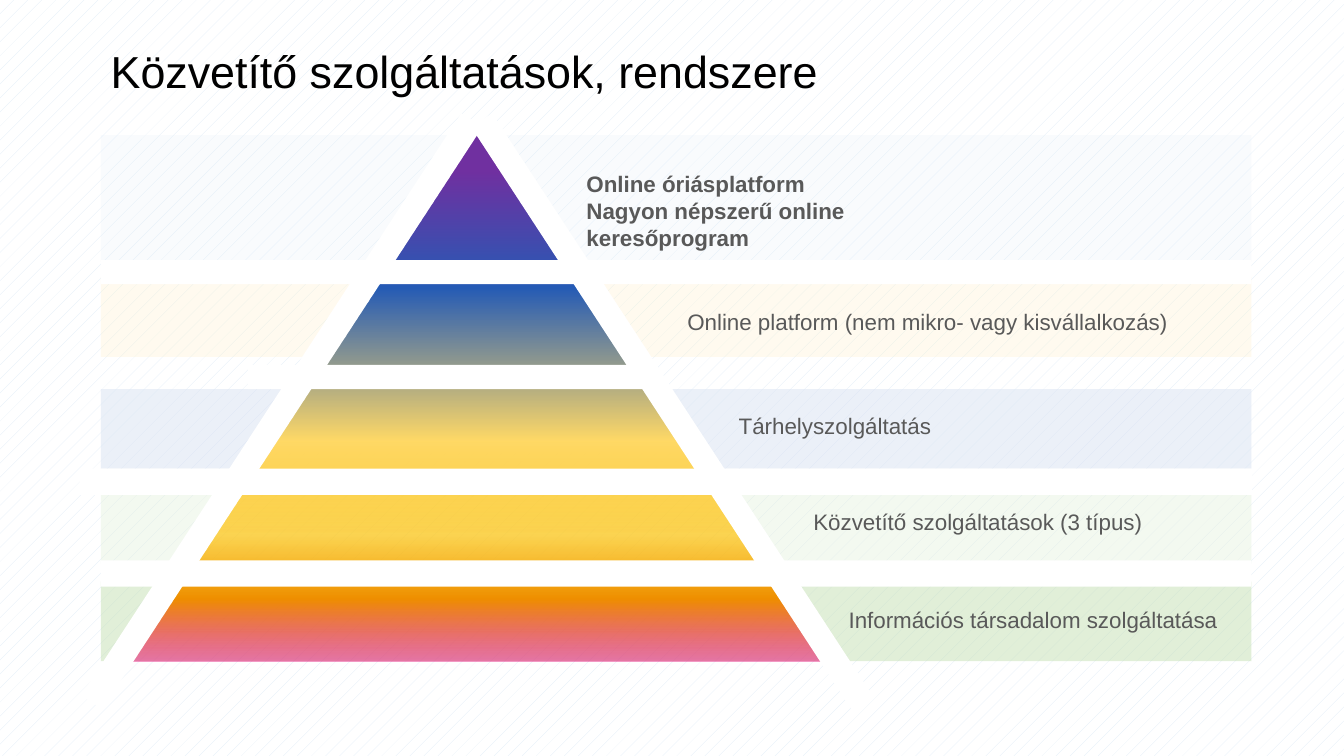
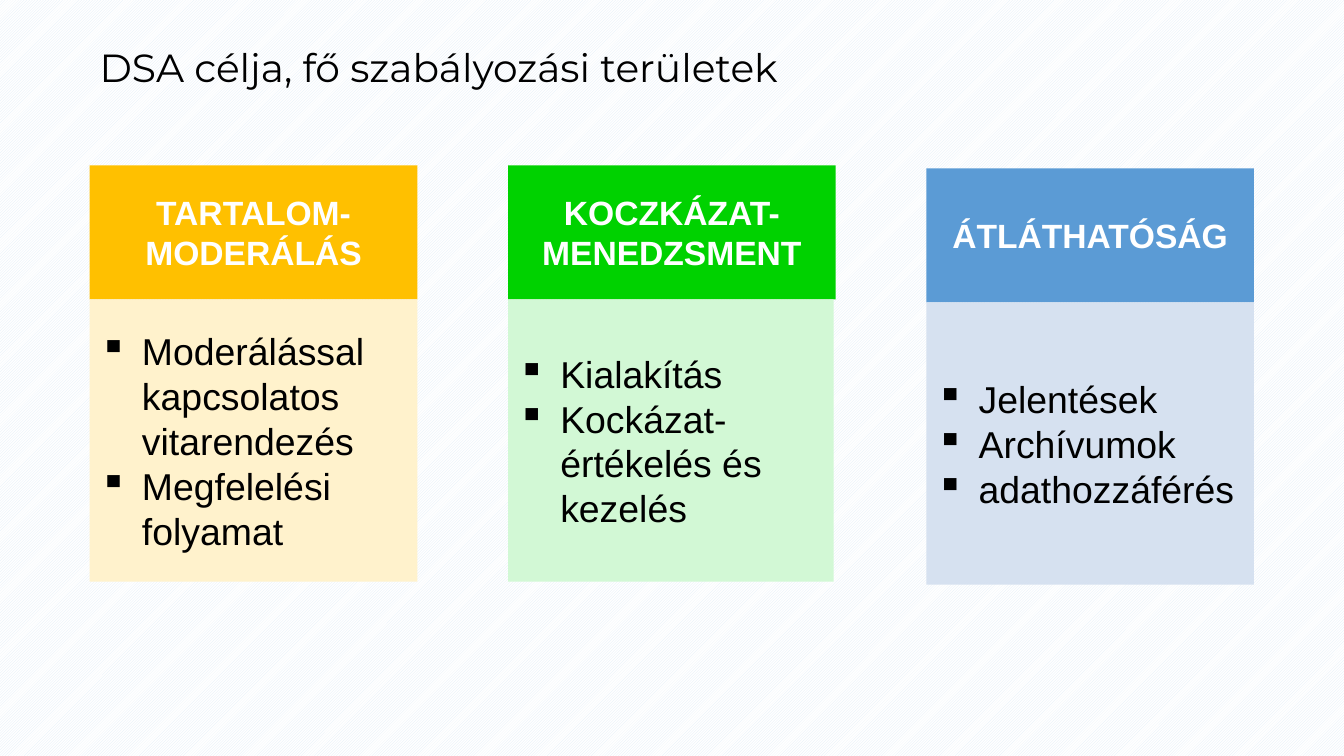
from dataclasses import dataclass
from math import atan2, degrees

from lxml.etree import SubElement
from pptx import Presentation
from pptx.dml.color import RGBColor
from pptx.enum.dml import MSO_PATTERN
from pptx.enum.shapes import MSO_SHAPE
from pptx.enum.text import MSO_ANCHOR, PP_ALIGN
from pptx.oxml.ns import qn
from pptx.shapes.autoshape import Shape
from pptx.slide import Slide
from pptx.util import Emu, Inches, Pt

# Grid: 160 columns by 90 rows of square cells
COLS, ROWS = 160, 90
CELL = Inches(7.5) / ROWS

BLACK = RGBColor(0x00, 0x00, 0x00)
WHITE = RGBColor(0xFF, 0xFF, 0xFF)
GREY = RGBColor(0x59, 0x59, 0x59)
PALE_BLUE = RGBColor(0xDE, 0xEB, 0xF7)
CREAM = RGBColor(0xFF, 0xF2, 0xCC)
PERIWINKLE = RGBColor(0xDA, 0xE3, 0xF3)
PALE_GREEN = RGBColor(0xE2, 0xF0, 0xD9)
LEAF = RGBColor(0xC5, 0xE0, 0xB4)
PURPLE = RGBColor(0x70, 0x30, 0xA0)
ROYAL = RGBColor(0x25, 0x5B, 0xB5)
YELLOW = RGBColor(0xFF, 0xD9, 0x66)
AMBER = RGBColor(0xFF, 0xC0, 0x00)
ORANGE = RGBColor(0xEF, 0x8F, 0x00)
PINK = RGBColor(0xE8, 0x06, 0x77)
GREEN = RGBColor(0x00, 0xD2, 0x00)
MINT = RGBColor(0xD2, 0xF8, 0xD5)
BLUE = RGBColor(0x5B, 0x9B, 0xD5)
MIST = RGBColor(0xD6, 0xE1, 0xF0)


@dataclass(frozen=True)
class Box:
    """A rectangle in grid cells."""
    x: float
    y: float
    w: float
    h: float

    def emu(self) -> tuple[Emu, ...]:
        return tuple(Emu(round(v * CELL)) for v in (self.x, self.y, self.w, self.h))


@dataclass(frozen=True)
class Style:
    size: float
    color: RGBColor
    bold: bool = False
    font: str = "Arial"


@dataclass(frozen=True)
class Band:
    y: float
    h: float
    color: RGBColor
    opacity: int


@dataclass(frozen=True)
class Stop:
    pos: int
    color: RGBColor
    opacity: int = 100


@dataclass(frozen=True)
class Label:
    box: Box
    lines: tuple[str, ...]
    bold: bool = False


@dataclass(frozen=True)
class Card:
    head: str
    items: tuple[str, ...]
    head_color: RGBColor
    body_color: RGBColor
    drop: float = 0
    body_w: float = 39


# Pyramid slide
BAND_X, BAND_W = 12, 137
BANDS = (
    Band(16.08, 15, PALE_BLUE, 16),
    Band(33, 9.48, CREAM, 31),
    Band(46.32, 9.48, PERIWINKLE, 52),
    Band(57.6, 9.48, PALE_GREEN, 38),
    Band(69.24, 9.48, LEAF, 51),
)
PYRAMID = Box(15.84, 16.08, 81.84, 62.64)
STOPS = (
    Stop(7, PURPLE), Stop(29, ROYAL), Stop(58, YELLOW),
    Stop(76, AMBER, 66), Stop(88, ORANGE), Stop(100, PINK, 51),
)
GAPS = (
    Box(BAND_X, 30.96, BAND_W, 2.88),
    Box(29.52, 43.44, 46.92, 2.88),
    Box(9.48, 55.8, 139.56, 3.12),
    Box(BAND_X, 66.72, BAND_W, 3.12),
)
EDGE_OFFSET, EDGE_Y, EDGE_W, EDGE_H = 23.22, 7.56, 3, 82.8
LABELS = (
    Label(Box(68.64, 19.68, 50.76, 10.92),
          ("Online óriásplatform", "Nagyon népszerű online keresőprogram"), True),
    Label(Box(80.64, 36.12, 63.48, 4.44),
          ("Online platform (nem mikro- vagy kisvállalkozás)",)),
    Label(Box(86.76, 48.48, 30, 4.44), ("Tárhelyszolgáltatás",)),
    Label(Box(95.64, 59.88, 45, 4.44), ("Közvetítő szolgáltatások (3 típus)",)),
    Label(Box(99.84, 71.52, 50.28, 4.44), ("Információs társadalom szolgáltatása",)),
)

# Card slide
CARD_X, CARD_Y, CARD_PITCH, CARD_W = 10.68, 19.68, 49.8, 39
HEAD_H, BODY_H = 15.96, 33.6
HEAD_STYLE = Style(24, WHITE, bold=True)
BODY_STYLE = Style(26.7, BLACK)
CARDS = (
    Card("TARTALOM-MODERÁLÁS",
         ("Moderálással kapcsolatos vitarendezés", "Megfelelési folyamat"),
         AMBER, CREAM),
    Card("KOCZKÁZAT-MENEDZSMENT",
         ("Kialakítás", "Kockázat-értékelés és kezelés"),
         GREEN, MINT, body_w=38.76),
    Card("ÁTLÁTHATÓSÁG",
         ("Jelentések", "Archívumok", "adathozzáférés"),
         BLUE, MIST, drop=0.36),
)


def add_alpha(color_el, opacity: int) -> None:
    if opacity < 100:
        SubElement(color_el, qn("a:alpha"), val=str(opacity * 1000))


def add_block(slide: Slide, box: Box, color: RGBColor, opacity: int = 100,
              kind: MSO_SHAPE = MSO_SHAPE.RECTANGLE) -> Shape:
    sp = slide.shapes.add_shape(kind, *box.emu())
    sp.shadow.inherit = False
    sp.line.fill.background()
    sp.fill.solid()
    sp.fill.fore_color.rgb = color
    add_alpha(next(sp._element.iter(qn("a:srgbClr"))), opacity)
    return sp


def write(sp: Shape, lines: tuple[str, ...], style: Style, bullets: bool = False,
          align: PP_ALIGN = PP_ALIGN.LEFT, spacing: float | None = None) -> None:
    tf = sp.text_frame
    tf.word_wrap = True
    for i, line in enumerate(lines):
        p = tf.add_paragraph() if i else tf.paragraphs[0]
        p.alignment = align
        if spacing:
            p.line_spacing = Pt(spacing)
        if bullets:
            pPr = p._p.get_or_add_pPr()
            pPr.set("marL", str(Inches(0.42)))
            pPr.set("indent", str(-Inches(0.42)))
            SubElement(pPr, qn("a:buChar"), char="▪")
        r = p.add_run()
        r.text = line
        r.font.name = style.font
        r.font.size = Pt(style.size)
        r.font.bold = style.bold
        r.font.color.rgb = style.color


def add_slide(prs: Presentation, pattern: MSO_PATTERN, title: str,
              box: Box, style: Style) -> Slide:
    """Blank slide with the shared patterned background and title."""
    s = prs.slides.add_slide(prs.slide_layouts[6])
    fill = s.background.fill
    fill.patterned()
    fill.pattern = pattern
    fill.fore_color.rgb = PALE_BLUE
    fill.back_color.rgb = WHITE
    sp = s.shapes.add_textbox(*box.emu())
    tf = sp.text_frame
    tf.margin_top = tf.margin_bottom = 0
    tf.vertical_anchor = MSO_ANCHOR.BOTTOM
    write(sp, (title,), style, spacing=29.3)
    return s


def add_pyramid(slide: Slide) -> None:
    sp = add_block(slide, PYRAMID, PURPLE, kind=MSO_SHAPE.ISOSCELES_TRIANGLE)
    sp.fill.gradient()
    sp.fill.gradient_angle = 270
    stop_list = next(sp._element.iter(qn("a:gsLst")))
    for old in list(stop_list):
        stop_list.remove(old)
    for stop in STOPS:
        gs = SubElement(stop_list, qn("a:gs"), pos=str(stop.pos * 1000))
        add_alpha(SubElement(gs, qn("a:srgbClr"), val=str(stop.color)), stop.opacity)


def build_pyramid_slide(prs: Presentation) -> None:
    s = add_slide(prs, MSO_PATTERN.PERCENT_5, "Közvetítő szolgáltatások, rendszere",
                  Box(12, 4.44, 119, 7.2), Style(32, BLACK))
    for band in BANDS:
        add_block(s, Box(BAND_X, band.y, BAND_W, band.h), band.color, band.opacity)
    add_pyramid(s)
    # White strips cut the pyramid into levels
    for gap in GAPS:
        add_block(s, gap, WHITE)
    # Slanted strips run along both sides of the pyramid
    axis = PYRAMID.x + PYRAMID.w / 2
    slant = degrees(atan2(PYRAMID.w / 2, PYRAMID.h))
    for side in (1, -1):
        x = axis + side * EDGE_OFFSET - EDGE_W / 2
        add_block(s, Box(x, EDGE_Y, EDGE_W, EDGE_H), WHITE).rotation = -side * slant
    for label in LABELS:
        sp = s.shapes.add_textbox(*label.box.emu())
        write(sp, label.lines, Style(16, GREY, label.bold))


def build_card_slide(prs: Presentation) -> None:
    s = add_slide(prs, MSO_PATTERN.LIGHT_UPWARD_DIAGONAL,
                  "DSA célja, fő szabályozási területek",
                  Box(10.68, 3.52, 113.64, 7.2), Style(28, BLACK, font="Montserrat"))
    for i, card in enumerate(CARDS):
        x, y = CARD_X + i * CARD_PITCH, CARD_Y + card.drop
        head = add_block(s, Box(x, y, CARD_W, HEAD_H), card.head_color)
        write(head, (card.head,), HEAD_STYLE, align=PP_ALIGN.CENTER)
        body = add_block(s, Box(x, y + HEAD_H, card.body_w, BODY_H), card.body_color)
        write(body, card.items, BODY_STYLE, bullets=True)


def main() -> None:
    prs = Presentation()
    prs.slide_width = Emu(round(COLS * CELL))
    prs.slide_height = Emu(round(ROWS * CELL))
    build_pyramid_slide(prs)
    build_card_slide(prs)
    prs.save("out.pptx")


if __name__ == "__main__":
    main()
